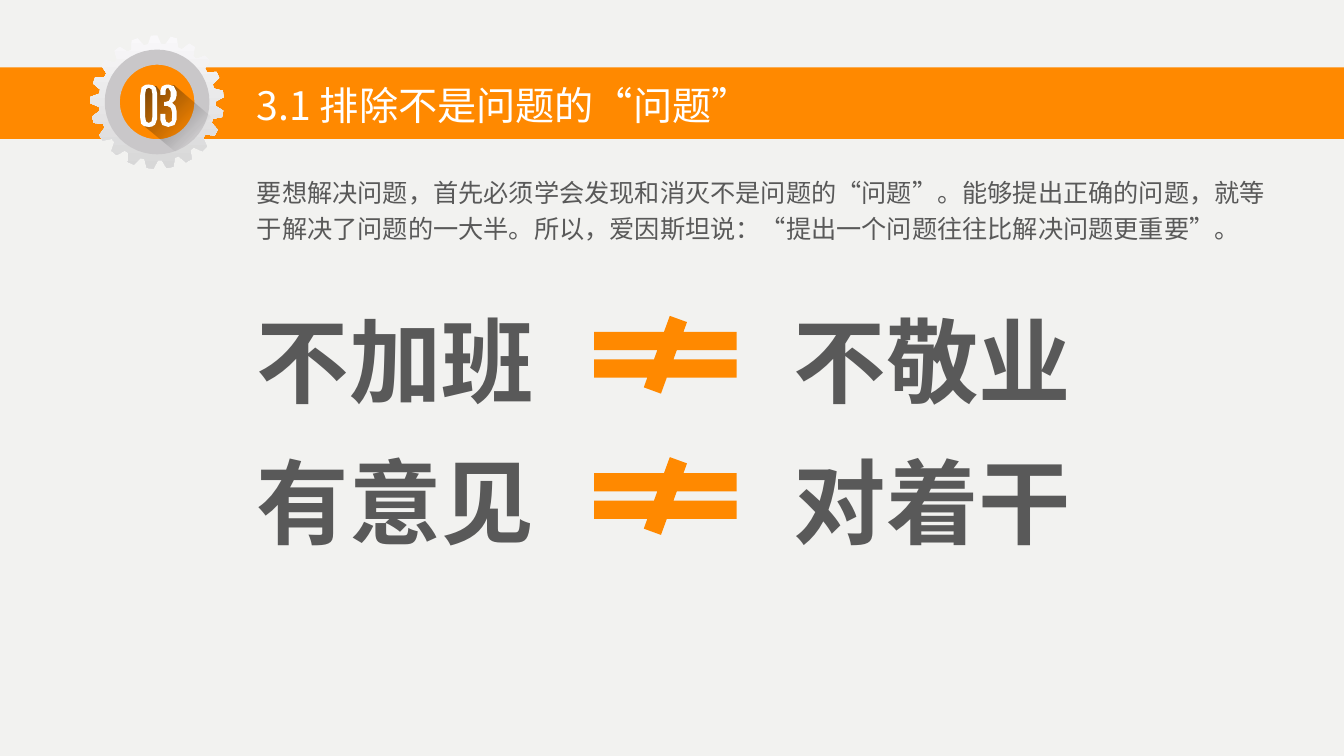
import math
import pptx
import pptx.util
import pptx.dml.color
import pptx.enum.shapes
import pptx.enum.text
import pptx.oxml.ns
import lxml.etree

Cm = pptx.util.Cm
Kind = pptx.enum.shapes.MSO_SHAPE
ORANGE = "FF8900"
GREY = "595959"
WHITE = "FFFFFF"
NOTO = "Noto Sans CJK SC"


def hue(code):
    return pptx.dml.color.RGBColor.from_string(code)


def trace(shapes, *loops):
    pen = None
    for loop in loops:
        dots = [(Cm(x), Cm(y)) for x, y in loop]
        if pen is None:
            pen = shapes.build_freeform(*dots[0])
        else:
            pen.move_to(*dots[0])
        pen.add_line_segments(dots[1:], close=True)
    shape = pen.convert_to_shape()
    shape.shadow.inherit = False
    shape.line.fill.background()
    return shape


deck = pptx.Presentation()
deck.slide_width = Cm(33.87)
deck.slide_height = Cm(19.05)
slide = deck.slides.add_slide(deck.slide_layouts[1])
slide.background.fill.solid()
slide.background.fill.fore_color.rgb = hue("F2F2F0")
shapes = slide.shapes
title, body = shapes.title, slide.placeholders[1]

bar = shapes.add_shape(Kind.RECTANGLE, 0, Cm(1.7), deck.slide_width, Cm(1.8))
bar.shadow.inherit = False
bar.fill.solid()
bar.fill.fore_color.rgb = hue(ORANGE)
bar.line.fill.background()

teeth = 21
rim = []
for tooth in range(teeth):
    mid = -92.6 + tooth * 360 / teeth
    for turn, reach in ((-6.5, 1.47), (-2.8, 1.68), (2.8, 1.68), (6.5, 1.47)):
        angle = math.radians(mid + turn)
        rim.append((3.96 + reach * math.cos(angle), 2.57 + reach * math.sin(angle)))
gear = trace(shapes, rim)
gear.fill.gradient()
gear.fill.gradient_angle = 270
for stop, code in zip(gear.fill.gradient_stops, ("F9F8FA", "D7D7D7")):
    stop.color.rgb = hue(code)

ring = shapes.add_shape(Kind.OVAL, Cm(2.83), Cm(1.44), Cm(2.26), Cm(2.26))
ring.shadow.inherit = False
ring.fill.solid()
ring.fill.fore_color.rgb = hue(ORANGE)
ring.line.color.rgb = hue("C9C7C9")
ring.line.width = pptx.util.Pt(10.75)

shade = trace(shapes, [
    (4.42, 3.81), (3.61, 3.15), (3.61, 2.21), (3.94, 2.18),
    (4.11, 2.39), (4.17, 2.18), (4.39, 2.16), (5.41, 3.02)])
shade.fill.gradient()
shade.fill.gradient_angle = 315
for stop, place in zip(shade.fill.gradient_stops, (0, 0.73)):
    stop.position = place
    stop.color.rgb = hue("0D0D0D")
for tint, alpha in zip(shade.element.iter(pptx.oxml.ns.qn("a:srgbClr")), (55000, 0)):
    lxml.etree.SubElement(tint, pptx.oxml.ns.qn("a:alpha")).set("val", str(alpha))

zero = trace(shapes, [
    (3.53, 2.42), (3.57, 2.2), (3.66, 2.14), (3.75, 2.13), (3.86, 2.15),
    (3.93, 2.21), (3.96, 2.36), (3.96, 3), (3.91, 3.14), (3.83, 3.19),
    (3.75, 3.2), (3.63, 3.18), (3.56, 3.12), (3.53, 2.95)
], [
    (3.75, 3.1), (3.82, 3.06), (3.84, 2.95), (3.84, 2.36), (3.82, 2.25),
    (3.75, 2.21), (3.68, 2.25), (3.66, 2.36), (3.66, 2.95), (3.68, 3.06)])
three = trace(shapes, [
    (4.17, 2.87), (4.17, 3), (4.19, 3.07), (4.26, 3.1), (4.33, 3.05),
    (4.34, 2.92), (4.34, 2.84), (4.31, 2.72), (4.22, 2.67), (4.14, 2.67),
    (4.14, 2.57), (4.17, 2.57), (4.26, 2.54), (4.3, 2.44), (4.3, 2.31),
    (4.24, 2.21), (4.18, 2.24), (4.17, 2.39), (4.04, 2.39), (4.04, 2.29),
    (4.08, 2.18), (4.16, 2.14), (4.24, 2.13), (4.38, 2.17), (4.45, 2.31),
    (4.45, 2.41), (4.42, 2.52), (4.34, 2.59), (4.42, 2.67), (4.45, 2.79),
    (4.45, 3.02), (4.4, 3.15), (4.24, 3.2), (4.09, 3.15), (4.04, 3.02),
    (4.04, 2.87)])
for digit in (zero, three):
    digit.fill.solid()
    digit.fill.fore_color.rgb = hue(WHITE)

for holder, box in ((title, (6.22, 1.93, 14, 1.45)), (body, (6.22, 4.19, 26.01, 2.03))):
    holder.left, holder.top, holder.width, holder.height = map(Cm, box)
    shapes.element.append(holder.element)

texts = [
    (title, "3.1 排除不是问题的“问题”", 28, NOTO, WHITE, False),
    (body, "要想解决问题，首先必须学会发现和消灭不是问题的“问题”。能够提出正确的问题，就等于解决了问题的一大半。所以，爱因斯坦说：“提出一个问题往往比解决问题更重要”。", 18, "Arial", GREY, False),
]
for row, pair in enumerate((("不加班", "不敬业"), ("有意见", "对着干"))):
    top = 7.54 + row * 3.56
    for left, word in zip((6.22, 19.76), pair):
        box = shapes.add_textbox(Cm(left), Cm(top), Cm(7.57), Cm(3.07))
        texts.append((box, word, 66, "Arial", GREY, True))
    sign = shapes.add_shape(Kind.MATH_NOT_EQUAL, Cm(14.33), Cm(top + 0.42), Cm(4.88), Cm(1.96))
    sign.shadow.inherit = False
    sign.fill.solid()
    sign.fill.fore_color.rgb = hue(ORANGE)
    sign.line.fill.background()

for shape, words, size, face, code, bold in texts:
    frame = shape.text_frame
    frame.word_wrap = shape is body
    frame.auto_size = pptx.enum.text.MSO_AUTO_SIZE.NONE
    frame.vertical_anchor = pptx.enum.text.MSO_ANCHOR.TOP
    para = frame.paragraphs[0]
    para.alignment = pptx.enum.text.PP_ALIGN.LEFT
    run = para.add_run()
    run.text = words
    run.font.size = pptx.util.Pt(size)
    run.font.name = face
    run.font.bold = bold
    run.font.color.rgb = hue(code)
    props = run._r.get_or_add_rPr()
    props.set("lang", "zh-CN")
    lxml.etree.SubElement(props, pptx.oxml.ns.qn("a:ea")).set("typeface", NOTO)

para = body.text_frame.paragraphs[0]
para.line_spacing = 1.2
para.space_before = pptx.util.Pt(0)
para.space_after = pptx.util.Pt(6)
props = para._p.get_or_add_pPr()
props.set("marL", "0")
props.set("indent", "0")
lxml.etree.SubElement(props, pptx.oxml.ns.qn("a:buNone"))

deck.save("out.pptx")
